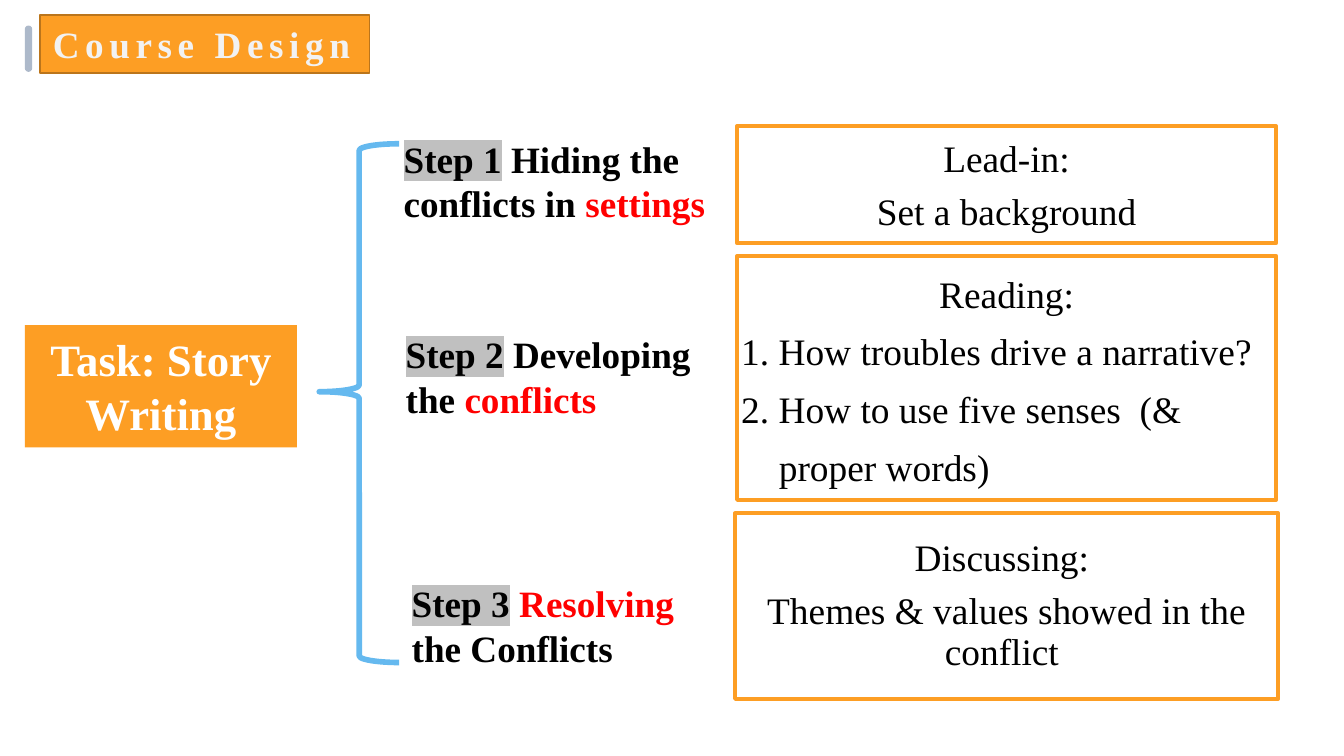
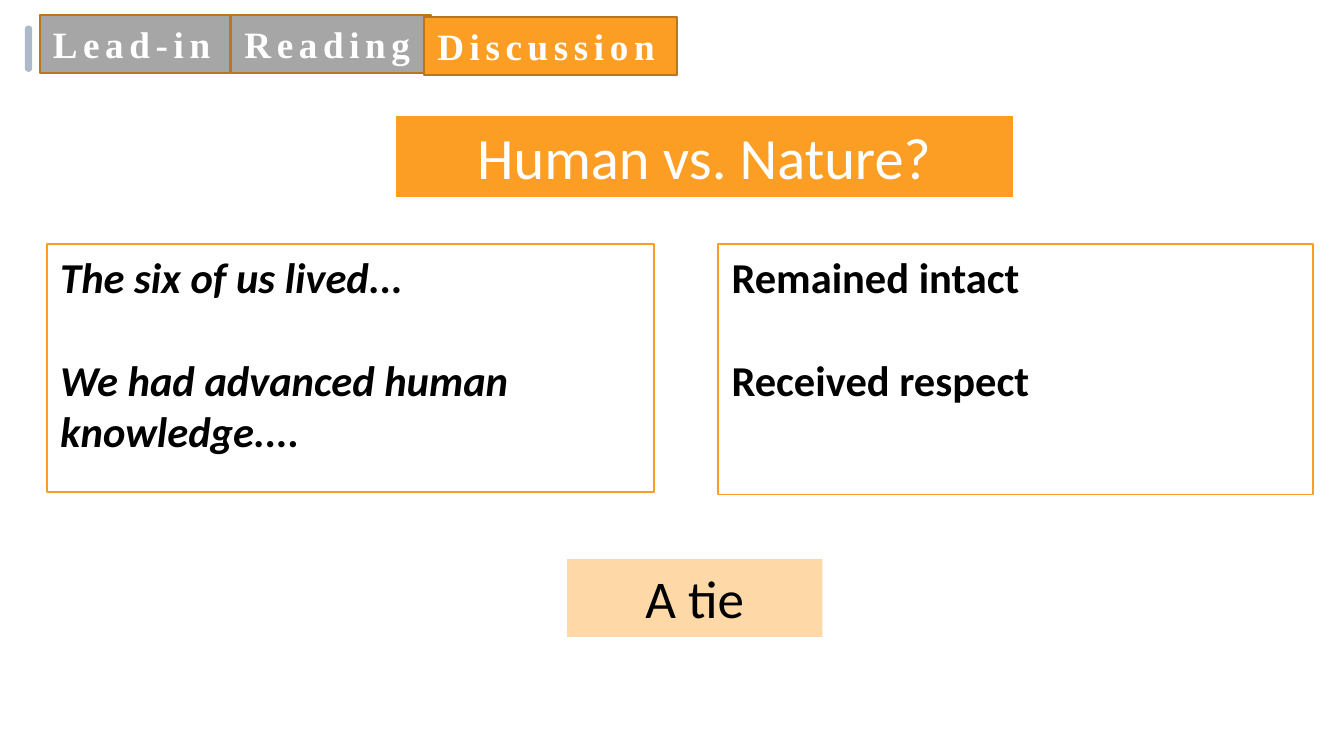
from dataclasses import dataclass, replace

from lxml.etree import SubElement
from pptx import Presentation
from pptx.dml.color import RGBColor
from pptx.enum.shapes import MSO_SHAPE
from pptx.enum.text import MSO_ANCHOR, MSO_AUTO_SIZE, PP_ALIGN
from pptx.oxml import parse_xml
from pptx.oxml.ns import nsdecls, qn
from pptx.slide import Slide
from pptx.util import Pt

EMU_PER_PX = 4572  # 200 px to the inch

SERIF, SANS = "Times New Roman", "Calibri"
ORANGE, PALE_ORANGE, BROWN = "FD9E24", "FED8A7", "BB751B"
GREY, SILVER, SLATE, BLUE = "A6A6A6", "C0C0C0", "ADB9CA", "65B9EF"
WHITE, OFF_WHITE, BLACK, RED = "FFFFFF", "F2F2F2", "000000", "FF0000"


@dataclass(frozen=True)
class Style:
    size: float
    font: str = SERIF
    color: str = BLACK
    bold: bool = False
    italic: bool = False
    tracking: int = 0
    highlight: str | None = None


@dataclass(frozen=True)
class Para:
    runs: list[tuple[str, Style]]
    align: PP_ALIGN = PP_ALIGN.LEFT
    line_spacing: float = 1.0
    before: int = 0
    indent: int = 0


@dataclass(frozen=True)
class Box:
    at: tuple[int, int, int, int]
    paras: tuple[Para, ...] = ()
    fill: str | None = None
    line: str | None = None
    line_width: float = 1
    kind: MSO_SHAPE = MSO_SHAPE.RECTANGLE
    adjustments: tuple[float, ...] = ()
    anchor: MSO_ANCHOR = MSO_ANCHOR.TOP
    insets: tuple[int, int, int, int] = (20, 10, 20, 10)
    wrap: bool = True
    grow: bool = False


def px(length: int) -> int:
    return length * EMU_PER_PX


def rgb(code: str) -> RGBColor:
    return RGBColor.from_string(code)


def add_run(paragraph, text: str, style: Style) -> None:
    run = paragraph.add_run()
    run.text = text
    font = run.font
    font.name, font.size = style.font, Pt(style.size)
    font.bold, font.italic = style.bold, style.italic
    font.color.rgb = rgb(style.color)
    properties = run._r.get_or_add_rPr()
    if style.tracking:
        properties.set("spc", str(style.tracking * 100))
    if style.highlight:
        highlight = parse_xml(f"<a:highlight {nsdecls('a')}/>")
        SubElement(highlight, qn("a:srgbClr"), val=style.highlight)
        properties.find(qn("a:solidFill")).addnext(highlight)


def add_box(slide: Slide, box: Box) -> None:
    shape = slide.shapes.add_shape(box.kind, *map(px, box.at))
    shape.shadow.inherit = False
    for index, value in enumerate(box.adjustments):
        shape.adjustments[index] = value
    if box.fill:
        shape.fill.solid()
        shape.fill.fore_color.rgb = rgb(box.fill)
    else:
        shape.fill.background()
    if box.line:
        shape.line.color.rgb = rgb(box.line)
        shape.line.width = Pt(box.line_width)
    else:
        shape.line.fill.background()

    frame = shape.text_frame
    frame.word_wrap = box.wrap
    frame.vertical_anchor = box.anchor
    if box.grow:
        frame.auto_size = MSO_AUTO_SIZE.SHAPE_TO_FIT_TEXT
    (frame.margin_left, frame.margin_top,
     frame.margin_right, frame.margin_bottom) = map(px, box.insets)
    for index, para in enumerate(box.paras):
        paragraph = frame.add_paragraph() if index else frame.paragraphs[0]
        paragraph.alignment = para.align
        paragraph.line_spacing = para.line_spacing
        paragraph.space_before = Pt(para.before)
        if para.indent:
            paragraph._p.get_or_add_pPr().set("marL", str(px(para.indent)))
        for text, style in para.runs:
            add_run(paragraph, text, style)


def centred(text: str, style: Style, **options) -> Para:
    return Para([(text, style)], PP_ALIGN.CENTER, **options)


TAB = Style(19.9, color=WHITE, bold=True, tracking=3)
STEP = Style(19.9, bold=True)
STEP_NUMBER = replace(STEP, highlight=SILVER)
STEP_FOCUS = replace(STEP, color=RED)
ACTIVITY = Style(20)
EVIDENCE = Style(22.8, SANS, bold=True)
QUOTE = replace(EVIDENCE, italic=True)
ACTIVITY_GAP = 7
EVIDENCE_GAP = 28


def add_marker(slide: Slide) -> None:
    add_box(slide, Box((37, 38, 11, 69), fill=SLATE,
                       kind=MSO_SHAPE.ROUNDED_RECTANGLE, adjustments=(0.5,)))


def add_tab(slide: Slide, text: str, at: tuple[int, int, int, int],
            fill: str = ORANGE, style: Style = TAB) -> None:
    add_box(slide, Box(at, (Para([(text, style)]),), fill, BROWN,
                       wrap=False, grow=True))


def add_step(slide: Slide, at: tuple[int, int, int, int],
             number: int, *wording: tuple[str, Style]) -> None:
    runs = [(f"Step {number}", STEP_NUMBER), *wording]
    add_box(slide, Box(at, (Para(runs),), grow=True))


def add_activity(slide: Slide, at: tuple[int, int, int, int],
                 insets: tuple[int, int, int, int], *paras: Para) -> None:
    add_box(slide, Box(at, paras, line=ORANGE, line_width=2.25,
                       anchor=MSO_ANCHOR.MIDDLE, insets=insets))


def add_evidence(slide: Slide, at: tuple[int, int, int, int],
                 style: Style, first: str, second: str) -> None:
    paras = (Para([(first, style)]),
             Para([(second, style)], before=EVIDENCE_GAP))
    add_box(slide, Box(at, paras, WHITE, ORANGE))


def build_course_design(slide: Slide) -> None:
    add_activity(slide, (1097, 188, 802, 174), (6, 13, 6, 6),
                 centred("Lead-in:", ACTIVITY, line_spacing=0.9),
                 centred("Set a background", ACTIVITY, line_spacing=0.9,
                         before=ACTIVITY_GAP))
    add_activity(slide, (1097, 381, 802, 363), (6, 12, 6, 6),
                 centred("Reading:", ACTIVITY),
                 *(Para([(text, ACTIVITY)], before=ACTIVITY_GAP, indent=indent)
                   for text, indent in (("1. How troubles drive a narrative?", 0),
                                        ("2. How to use five senses  (&", 0),
                                        ("proper words)", 56))))
    add_activity(slide, (1094, 764, 808, 276), (4, 4, 4, 4),
                 centred("Discussing: ", ACTIVITY, line_spacing=0.9),
                 centred("Themes & values showed in the conflict ", ACTIVITY,
                         line_spacing=0.9, before=ACTIVITY_GAP))

    add_box(slide, Box((37, 484, 405, 182),
                       (centred("Task: Story Writing",
                                Style(24, color=WHITE, bold=True)),),
                       ORANGE, grow=True))
    add_box(slide, Box((475, 214, 119, 772), line=BLUE, line_width=3,
                       kind=MSO_SHAPE.LEFT_BRACE, adjustments=(0.083, 0.478)))
    add_step(slide, (581, 193, 494, 154), 1,
             (" Hiding the conflicts in ", STEP), ("settings", STEP_FOCUS))
    add_step(slide, (584, 484, 482, 154), 2,
             (" Developing the ", STEP), ("conflicts", STEP_FOCUS))
    add_step(slide, (593, 854, 476, 154), 3, (" ", STEP),
             ("Resolving ", STEP_FOCUS), ("the Conflicts", STEP))
    add_marker(slide)
    add_tab(slide, "Course Design", (59, 22, 491, 87),
            style=replace(TAB, color=OFF_WHITE))


def build_discussion(slide: Slide) -> None:
    add_marker(slide)
    add_tab(slide, "Reading", (344, 22, 298, 87), GREY)
    add_box(slide, Box((587, 170, 922, 126),
                       (centred("Human vs. Nature?",
                                Style(31.3, SANS, WHITE)),),
                       ORANGE, WHITE, 1.5, grow=True))
    add_tab(slide, "Discussion", (631, 25, 376, 87))
    add_evidence(slide, (70, 363, 903, 369), QUOTE,
                 "The six of us lived...", "We had advanced human knowledge....")
    add_evidence(slide, (1069, 363, 885, 373), EVIDENCE,
                 "Remained intact", "Received respect")
    add_box(slide, Box((844, 832, 380, 116),
                       (centred("A tie", Style(28.4, SANS)),),
                       PALE_ORANGE, grow=True))
    add_tab(slide, "Lead-in", (59, 22, 283, 87), GREY)


def main() -> None:
    deck = Presentation()
    deck.slide_width, deck.slide_height = px(2000), px(1125)
    blank = deck.slide_layouts[6]
    for build in (build_course_design, build_discussion):
        build(deck.slides.add_slide(blank))
    deck.save("out.pptx")


if __name__ == "__main__":
    main()
